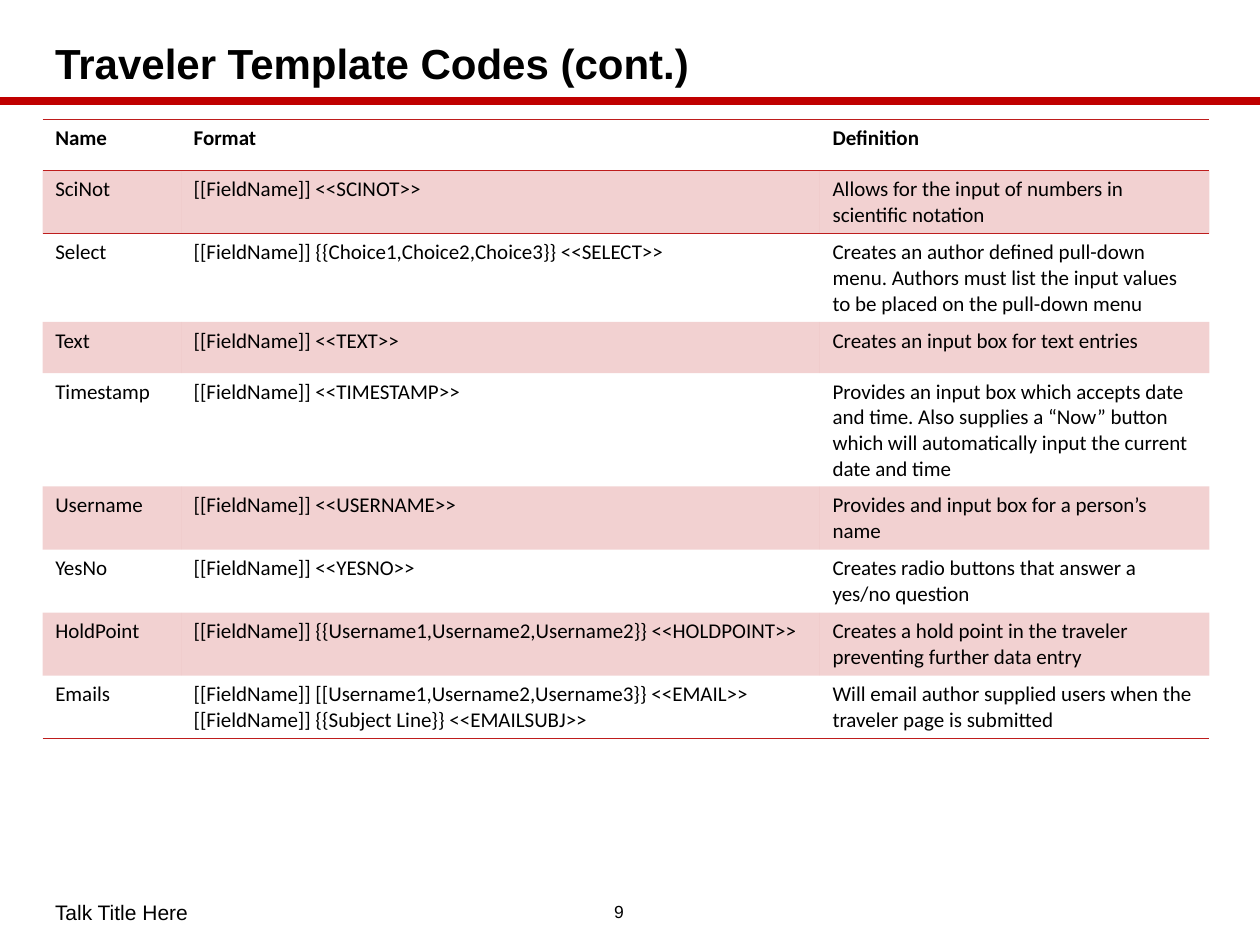
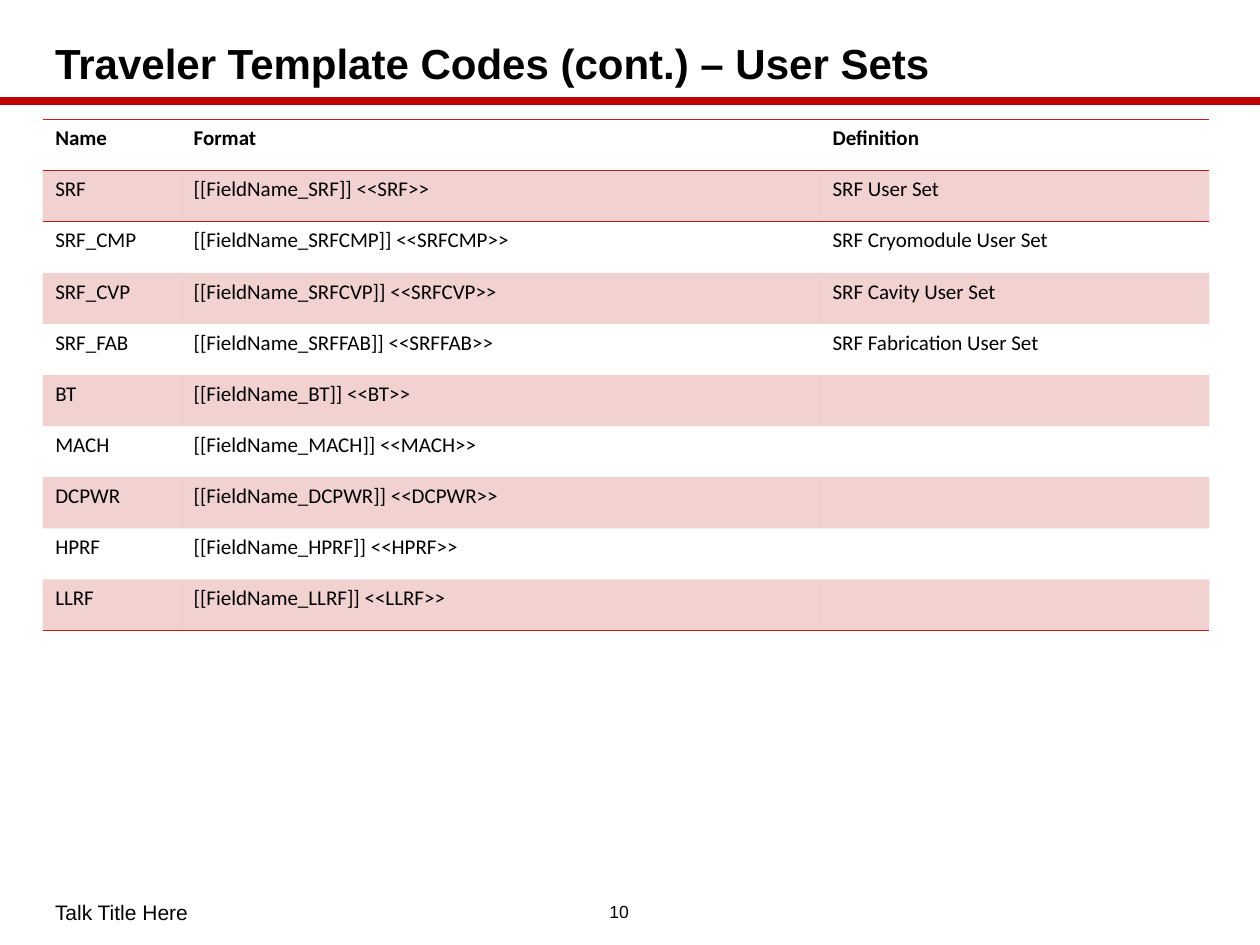
from lxml import etree
from pptx import Presentation
from pptx.dml.color import RGBColor
from pptx.enum.shapes import MSO_CONNECTOR
from pptx.enum.text import MSO_ANCHOR as ANCHOR, PP_ALIGN as ALIGN
from pptx.oxml import parse_xml
from pptx.oxml.ns import nsdecls, qn
from pptx.util import Cm, Pt

FOOTER = "Talk Title Here"
FIRST_PAGE = 9
HEADER = ("Name", "Format", "Definition")
SLIDES = [
    ("Traveler Template Codes (cont.)", [
        ("SciNot", "[[FieldName]] <<SCINOT>>",
         "Allows for the input of numbers in scientific notation"),
        ("Select", "[[FieldName]] {{Choice1,Choice2,Choice3}} <<SELECT>>",
         "Creates an author defined pull-down menu. Authors must list the "
         "input values to be placed on the pull-down menu"),
        ("Text", "[[FieldName]] <<TEXT>>",
         "Creates an input box for text entries"),
        ("Timestamp", "[[FieldName]] <<TIMESTAMP>>",
         "Provides an input box which accepts date and time. Also supplies a "
         "“Now” button which will automatically input the current date and time"),
        ("Username", "[[FieldName]] <<USERNAME>>",
         "Provides and input box for a person’s name"),
        ("YesNo", "[[FieldName]] <<YESNO>>",
         "Creates radio buttons that answer a yes/no question"),
        ("HoldPoint",
         "[[FieldName]] {{Username1,Username2,Username2}} <<HOLDPOINT>>",
         "Creates a hold point in the traveler preventing further data entry"),
        ("Emails",
         "[[FieldName]] [[Username1,Username2,Username3}} <<EMAIL>>\v"
         "[[FieldName]] {{Subject Line}} <<EMAILSUBJ>>",
         "Will email author supplied users when the traveler page is submitted"),
    ]),
    ("Traveler Template Codes (cont.) – User Sets", [
        ("SRF", "[[FieldName_SRF]] <<SRF>>", "SRF User Set"),
        ("SRF_CMP", "[[FieldName_SRFCMP]] <<SRFCMP>>", "SRF Cryomodule User Set"),
        ("SRF_CVP", "[[FieldName_SRFCVP]] <<SRFCVP>>", "SRF Cavity User Set"),
        ("SRF_FAB", "[[FieldName_SRFFAB]] <<SRFFAB>>", "SRF Fabrication User Set"),
        ("BT", "[[FieldName_BT]] <<BT>>", ""),
        ("MACH", "[[FieldName_MACH]] <<MACH>>", ""),
        ("DCPWR", "[[FieldName_DCPWR]] <<DCPWR>>", ""),
        ("HPRF", "[[FieldName_HPRF]] <<HPRF>>", ""),
        ("LLRF", "[[FieldName_LLRF]] <<LLRF>>", ""),
    ]),
]

BLACK, RULE_RED, TABLE_RED = "000000", "C00000", "BE1D1D"
BAND_ALPHA = 20
SLIDE_W, SLIDE_H = 25.4, 19.05
LEFT, RULE_Y = 0.86, 2.03
TABLE_TOP, ROW_H = 2.41, 1.03
COL_W = (2.79, 12.88, 7.85)
FOOT_Y, FOOT_H = 17.96, 0.85
TITLE_BOX = (LEFT, 0.66, sum(COL_W), 1.35)
FOOTER_BOX = (LEFT, FOOT_Y, 10.87, FOOT_H)
PAGE_BOX = (11.73, FOOT_Y, 1.5, FOOT_H)
NO_STYLE = "{2D5ABB26-0587-4C30-8999-92F81FD0307C}"


def rgb(color):
    return RGBColor.from_string(color)


def write(p, text, **font):
    p.text = text
    p.font.color.rgb = rgb(BLACK)
    for target in (p, *p.runs):
        for name, value in font.items():
            setattr(target.font, name, value)
    for r in p.runs:
        r.font.color.rgb = rgb(BLACK)


def add_text(s, box, text, size, bold=False, **para):
    tf = s.shapes.add_textbox(*map(Cm, box)).text_frame
    tf.word_wrap, tf.vertical_anchor = True, ANCHOR.MIDDLE
    p = tf.paragraphs[0]
    write(p, text, name="Arial", size=Pt(size), bold=bold)
    for name, value in para.items():
        setattr(p, name, value)


def add_rule(s):
    rule = s.shapes.add_connector(
        MSO_CONNECTOR.STRAIGHT, 0, Cm(RULE_Y), Cm(SLIDE_W), Cm(RULE_Y))
    rule.line.color.rgb = rgb(RULE_RED)
    rule.line.width = Pt(4.5)
    etree.SubElement(rule._element.spPr, qn("a:effectLst"))


def fill_band(cell):
    cell.fill.solid()
    cell.fill.fore_color.rgb = rgb(TABLE_RED)
    color = cell._tc.tcPr.find(".//" + qn("a:srgbClr"))
    etree.SubElement(color, qn("a:alpha"), val=str(BAND_ALPHA * 1000))


def add_borders(cell, *sides):
    """Put lines on the given sides, named in schema order ("T" before "B")."""
    tc_pr = cell._tc.get_or_add_tcPr()
    for i, side in enumerate(sides):
        tc_pr.insert(i, parse_xml(
            f'<a:ln{side} {nsdecls("a")} w="{Pt(1)}"><a:solidFill>'
            f'<a:srgbClr val="{TABLE_RED}"/></a:solidFill></a:ln{side}>'))


def add_code_table(s, codes):
    rows = [HEADER, *codes]
    box = (LEFT, TABLE_TOP, sum(COL_W), ROW_H * len(rows))
    table = s.shapes.add_table(len(rows), len(HEADER), *map(Cm, box)).table
    table._tbl.tblPr.find(qn("a:tableStyleId")).text = NO_STYLE
    table.horz_banding = False
    for column, width in zip(table.columns, COL_W):
        column.width = Cm(width)
    for i, row in enumerate(rows):
        table.rows[i].height = Cm(ROW_H)
        for j, text in enumerate(row):
            cell = table.cell(i, j)
            write(cell.text_frame.paragraphs[0], text,
                  name="Calibri", size=Pt(12), bold=i == 0)
            if i % 2:
                fill_band(cell)
            else:
                cell.fill.background()
            if i == 0:
                add_borders(cell, "T", "B")
            elif i == 1:
                add_borders(cell, "T")
            elif i == len(rows) - 1:
                add_borders(cell, "B")


def main():
    prs = Presentation()
    prs.slide_width, prs.slide_height = Cm(SLIDE_W), Cm(SLIDE_H)
    for page, (title, codes) in enumerate(SLIDES, FIRST_PAGE):
        s = prs.slides.add_slide(prs.slide_layouts[6])
        add_rule(s)
        add_text(s, TITLE_BOX, title, 24, bold=True, line_spacing=0.9)
        add_text(s, FOOTER_BOX, FOOTER, 12)
        add_text(s, PAGE_BOX, str(page), 10, alignment=ALIGN.CENTER)
        add_code_table(s, codes)
    prs.save("out.pptx")


if __name__ == "__main__":
    main()
